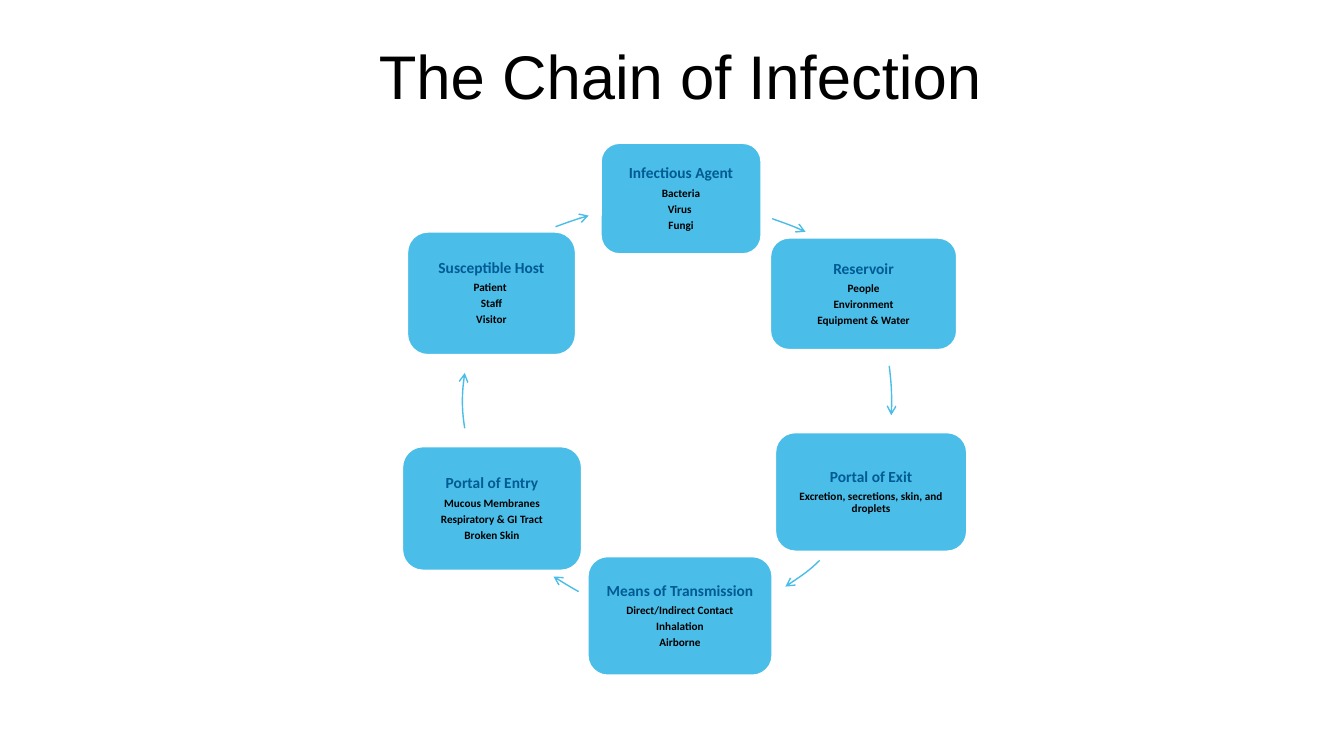
import pptx
import pptx.util
import pptx.dml.color
import pptx.enum.shapes
import pptx.enum.text
import pptx.oxml.ns
import lxml.etree

EMU_PER_PX = 9144
SKY = pptx.dml.color.RGBColor(0x4A, 0xBD, 0xE8)
NAVY = pptx.dml.color.RGBColor(0x00, 0x5B, 0x94)
BLACK = pptx.dml.color.RGBColor(0, 0, 0)
WHITE = pptx.dml.color.RGBColor(0xFF, 0xFF, 0xFF)
RING_SIZE = 426

LINKS = [
    ((596, 142, 159, 110), "Infectious Agent", ["Bacteria", "Virus ", "Fungi"]),
    ((764, 236, 185, 111), "Reservoir", ["People", "Environment", "Equipment & Water"]),
    ((769, 429, 190, 118), "Portal of Exit", ["Excretion, secretions, skin, and droplets"]),
    ((583, 552, 183, 118), "Means of Transmission",
     ["Direct/Indirect Contact", "Inhalation", "Airborne"]),
    ((399, 443, 178, 123), "Portal of Entry",
     ["Mucous Membranes", "Respiratory & GI Tract", "Broken Skin"]),
    ((404, 230, 167, 122), "Susceptible Host", ["Patient ", "Staff", "Visitor"]),
]
ARROWS = [
    ((493, 209), [(766, 217), (777, 221), (789, 225), (799, 230)]),
    ((458, 183), [(882, 363), (884, 379), (885, 396), (884, 412)]),
    ((457, 186), [(813, 556), (803, 566), (791, 574), (779, 582)]),
    ((459, 185), [(574, 587), (565, 582), (557, 577), (549, 572)]),
    ((459, 185), [(461, 425), (458, 407), (458, 388), (461, 370)]),
    ((423, 208), [(551, 225), (562, 221), (573, 217), (584, 214)]),
]


def px(value):
    return pptx.util.Emu(value * EMU_PER_PX)


def apply_format(target, values):
    for name, value in values.items():
        setattr(target, name, value)


def format_paragraph(paragraph, text, face, size, color, bold, after):
    paragraph.text = text
    apply_format(paragraph, {
        "alignment": pptx.enum.text.PP_ALIGN.CENTER,
        "line_spacing": 0.9,
        "space_before": pptx.util.Pt(0),
        "space_after": pptx.util.Pt(after),
    })
    font = paragraph.runs[0].font
    apply_format(font, {"name": face, "size": pptx.util.Pt(size), "bold": bold})
    font.color.rgb = color


def add_title(slide, text):
    title = slide.shapes.title
    apply_format(title, {"left": px(200), "top": px(13), "width": px(950), "height": px(104)})
    apply_format(title.text_frame, {
        "vertical_anchor": pptx.enum.text.MSO_ANCHOR.BOTTOM,
        "word_wrap": True,
    })
    format_paragraph(title.text_frame.paragraphs[0], text, "Arial", 44, BLACK, False, 0)


def add_link(slide, bounds, heading, examples):
    link = slide.shapes.add_shape(
        pptx.enum.shapes.MSO_SHAPE.ROUNDED_RECTANGLE, *map(px, bounds))
    link.shadow.inherit = False
    link.fill.solid()
    link.fill.fore_color.rgb = SKY
    link.line.color.rgb = WHITE
    link.line.width = pptx.util.Pt(1.25)
    frame = link.text_frame
    apply_format(frame, {
        "word_wrap": True,
        "vertical_anchor": pptx.enum.text.MSO_ANCHOR.MIDDLE,
        "margin_left": px(10),
        "margin_right": px(10),
        "margin_top": px(10),
        "margin_bottom": px(10),
    })
    format_paragraph(frame.paragraphs[0], heading, "Calibri", 11, NAVY, True, 3.85)
    for example in examples:
        format_paragraph(frame.add_paragraph(), example, "Calibri", 8, BLACK, True, 2.8)


def bend_outline(arrow, points):
    qn = pptx.oxml.ns.qn
    outline = next(arrow.element.iter(qn("a:path")))
    for child in list(outline):
        outline.remove(child)
    outline.set("w", str(px(RING_SIZE)))
    outline.set("h", str(px(RING_SIZE)))
    start = lxml.etree.SubElement(outline, qn("a:moveTo"))
    curve = lxml.etree.SubElement(outline, qn("a:cubicBezTo"))
    for parent, (x, y) in zip((start, curve, curve, curve), points):
        lxml.etree.SubElement(parent, qn("a:pt"), x=str(x), y=str(y))


def add_arrow(slide, ring_corner, controls):
    left, top = ring_corner
    points = [(px(x - left), px(y - top)) for x, y in controls]
    builder = slide.shapes.build_freeform(*points[0], scale=1.0)
    builder.add_line_segments(points[1:], close=False)
    arrow = builder.convert_to_shape()
    apply_format(arrow, {
        "left": px(left),
        "top": px(top),
        "width": px(RING_SIZE),
        "height": px(RING_SIZE),
    })
    bend_outline(arrow, points)
    arrow.shadow.inherit = False
    arrow.fill.background()
    arrow.line.color.rgb = SKY
    arrow.line.width = pptx.util.Pt(1)
    stroke = next(arrow.element.iter(pptx.oxml.ns.qn("a:ln")))
    lxml.etree.SubElement(stroke, pptx.oxml.ns.qn("a:tailEnd"), type="arrow")


def main():
    deck = pptx.Presentation()
    apply_format(deck, {"slide_width": px(1333), "slide_height": px(750)})
    slide = deck.slides.add_slide(deck.slide_layouts[5])
    add_title(slide, "The Chain of Infection")
    for link, arrow in zip(LINKS, ARROWS):
        add_link(slide, *link)
        add_arrow(slide, *arrow)
    deck.save("out.pptx")


if __name__ == "__main__":
    main()
